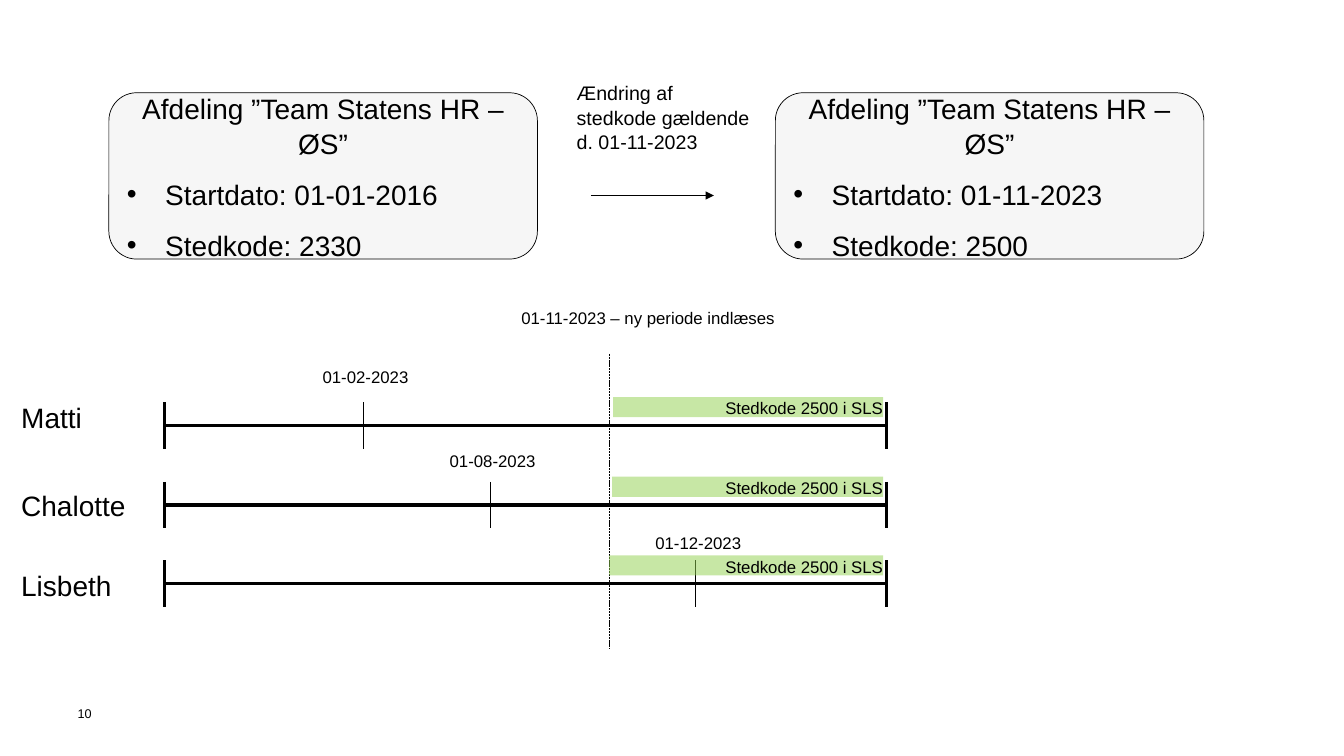
from lxml import etree
from pptx import Presentation
from pptx.dml.color import RGBColor
from pptx.enum.dml import MSO_LINE
from pptx.enum.shapes import MSO_CONNECTOR, MSO_SHAPE
from pptx.enum.text import MSO_ANCHOR, PP_ALIGN
from pptx.oxml.ns import qn
from pptx.util import Pt

EMU_PER_PX = 9144
FONT = "Arial"
BLACK = "000000"
PANEL = "F6F6F6"
GREEN = "92D050"
THIN = 0.5
THICK = 2.25
STRAIGHT = MSO_CONNECTOR.STRAIGHT
ROUNDED = MSO_SHAPE.ROUNDED_RECTANGLE
RECTANGLE = MSO_SHAPE.RECTANGLE
DASH = MSO_LINE.SQUARE_DOT
LEFT, CENTER, RIGHT = PP_ALIGN.LEFT, PP_ALIGN.CENTER, PP_ALIGN.RIGHT
TOP, MIDDLE = MSO_ANCHOR.TOP, MSO_ANCHOR.MIDDLE

AXIS_START, AXIS_END = 163, 879
HALF_TICK = 23
CHANGE_X = 604
BAR_END = 876


def px(length):
    return length * EMU_PER_PX


def color(value):
    return RGBColor.from_string(value)


def format_paragraph(paragraph, size, align=LEFT):
    paragraph.alignment = align
    paragraph.line_spacing = 1.05
    paragraph.font.name = FONT
    paragraph.font.size = Pt(size)
    paragraph.font.color.rgb = color(BLACK)


def set_frame(frame, side=0, end=0, anchor=TOP):
    frame.word_wrap = True
    frame.vertical_anchor = anchor
    frame.margin_left = frame.margin_right = px(side)
    frame.margin_top = frame.margin_bottom = px(end)


def add_label(slide, left, top, width, height, text, size):
    label = slide.shapes.add_textbox(px(left), px(top), px(width), px(height))
    set_frame(label.text_frame)
    label.text_frame.text = text
    format_paragraph(label.text_frame.paragraphs[0], size)


def add_line(slide, x1, y1, x2, y2, weight):
    line = slide.shapes.add_connector(STRAIGHT, px(x1), px(y1), px(x2), px(y2))
    line.line.color.rgb = color(BLACK)
    line.line.width = Pt(weight)
    etree.SubElement(line._element.spPr, qn("a:effectLst"))
    return line


def add_box(slide, preset, left, top, width, height, fill):
    box = slide.shapes.add_shape(preset, px(left), px(top), px(width), px(height))
    box.shadow.inherit = False
    box.fill.solid()
    box.fill.fore_color.rgb = color(fill)
    return box


def add_bullet(paragraph):
    properties = paragraph._p.get_or_add_pPr()
    properties.set("marL", str(px(38)))
    properties.set("indent", str(px(-38)))
    bullet_font = etree.SubElement(properties, qn("a:buFont"))
    bullet_font.set("typeface", FONT)
    etree.SubElement(properties, qn("a:buChar")).set("char", "•")


def add_department(slide, left, start_date, place_code):
    department = add_box(slide, ROUNDED, left, 92, 425, 165, PANEL)
    department.line.color.rgb = color(BLACK)
    department.line.width = Pt(THIN)
    frame = department.text_frame
    set_frame(frame, 10, 5, MIDDLE)
    frame.text = "Afdeling ”Team Statens HR – ØS”"
    format_paragraph(frame.paragraphs[0], 20, CENTER)
    for fact in (f"Startdato: {start_date}", f"Stedkode: {place_code}"):
        paragraph = frame.add_paragraph()
        paragraph.text = fact
        add_bullet(paragraph)
        format_paragraph(paragraph, 20)
        paragraph.space_before = Pt(11)


def add_arrow(slide, x1, x2, y):
    arrow = add_line(slide, x1, y, x2, y, THIN)
    outline = arrow.line._get_or_add_ln()
    etree.SubElement(outline, qn("a:tailEnd")).set("type", "triangle")


def add_period_bar(slide, left, top):
    bar = add_box(slide, RECTANGLE, left, top, BAR_END - left, 20, GREEN)
    bar.line.fill.background()
    shade = bar._element.spPr.find(f"{qn('a:solidFill')}/{qn('a:srgbClr')}")
    etree.SubElement(shade, qn("a:alpha")).set("val", "51000")
    set_frame(bar.text_frame)
    bar.text_frame.text = "Stedkode 2500 i SLS"
    format_paragraph(bar.text_frame.paragraphs[0], 12, RIGHT)


def add_timeline(slide, name, name_top, axis_y, date, date_x, date_top, bar_left):
    ticks = ((AXIS_START, THICK), (AXIS_END, THICK), (date_x, THIN))
    for x, weight in ticks:
        add_line(slide, x, axis_y - HALF_TICK, x, axis_y + HALF_TICK, weight)
    add_line(slide, AXIS_START, axis_y, AXIS_END, axis_y, THICK)
    add_label(slide, 21, name_top, 118, 34, name, 20)
    add_label(slide, date_x - 40, date_top, 87, 20, date, 12)
    add_period_bar(slide, bar_left, axis_y - 28)


def main():
    deck = Presentation()
    deck.slide_width, deck.slide_height = px(1333), px(750)
    slide = deck.slides.add_slide(deck.slide_layouts[6])

    add_label(slide, 77, 700, 31, 30, "10", 9)
    add_department(slide, 108, "01-01-2016", "2330")
    add_department(slide, 769, "01-11-2023", "2500")
    add_arrow(slide, 586, 708, 194)
    change = "Ændring af stedkode gældende d. 01-11-2023"
    add_label(slide, 572, 79, 173, 71, change, 14)

    add_label(slide, 517, 304, 311, 20, "01-11-2023 – ny periode indlæses", 12)
    change_line = add_line(slide, CHANGE_X, 351, CHANGE_X, 643, THIN)
    change_line.line.dash_style = DASH
    timelines = (
        ("Matti", 396, 422, "01-02-2023", 360, 363, 608),
        ("Chalotte", 483, 501, "01-08-2023", 486, 446, 607),
        ("Lisbeth", 562, 579, "01-12-2023", 690, 528, 604),
    )
    for timeline in timelines:
        add_timeline(slide, *timeline)

    deck.save("out.pptx")


if __name__ == "__main__":
    main()
